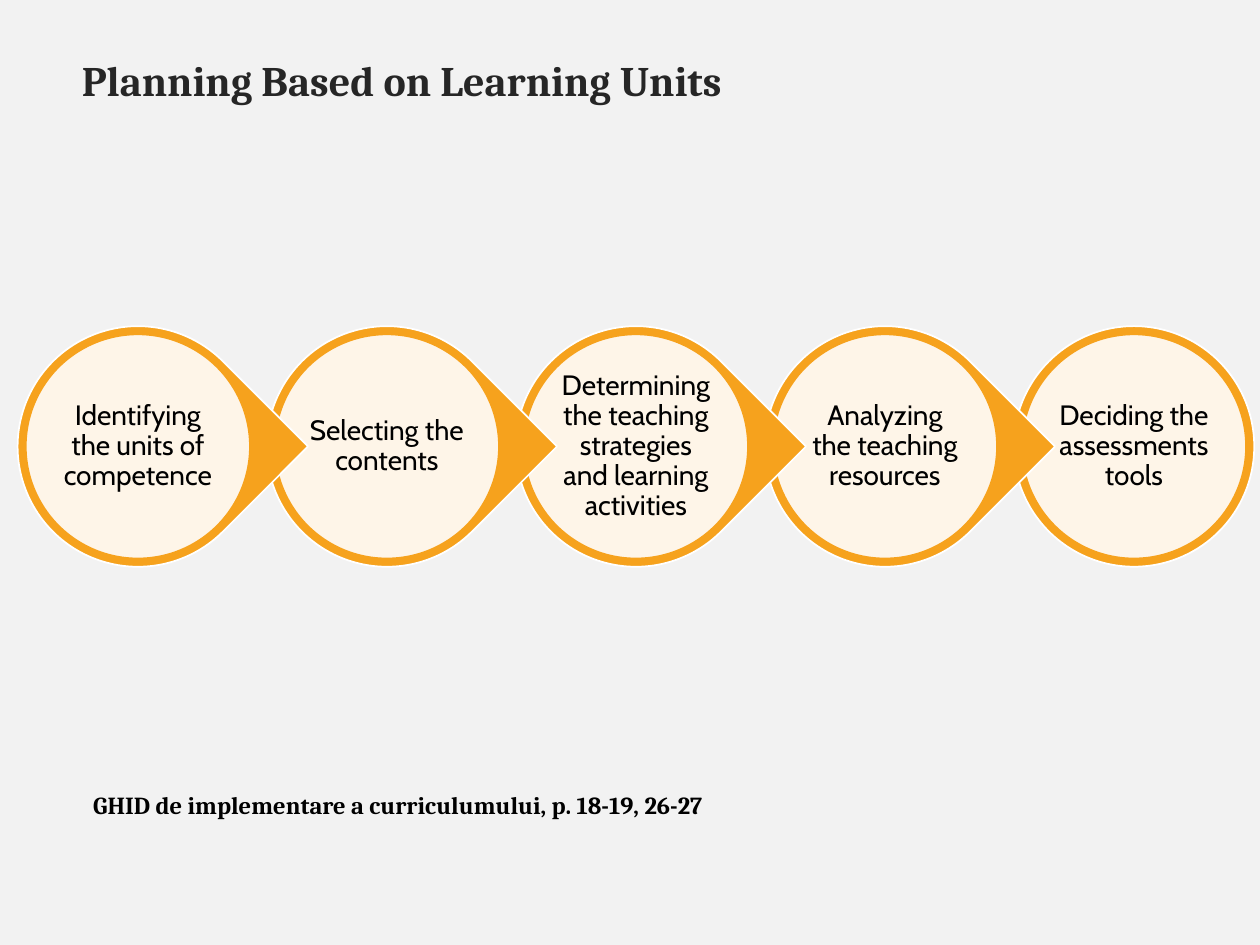
from lxml import etree
from pptx import Presentation
from pptx.dml.color import RGBColor
from pptx.enum.shapes import MSO_SHAPE
from pptx.enum.text import MSO_ANCHOR, PP_ALIGN
from pptx.oxml.ns import qn
from pptx.util import Cm, Pt

ELLIPSE, TEARDROP = MSO_SHAPE.OVAL, MSO_SHAPE.TEAR
MIDDLE, CENTER = MSO_ANCHOR.MIDDLE, PP_ALIGN.CENTER

ORANGE, WHITE, BLACK = "F6A21D", "FFFFFF", "000000"
STEPS = [
    "Identifying the units of competence",
    "Selecting the contents",
    "Determining the teaching strategies and learning activities",
    "Analyzing the teaching resources",
    "Deciding the assessments tools",
]
FIRST_CENTER, CENTER_Y, PITCH = 2.78, 9, 5.02
OUTER, INNER, LABEL = 4.85, 4.52, 3.23


def color(hex_code):
    return RGBColor.from_string(hex_code)


def centered(x, size):
    """Left, top, width and height of a square around a step's center."""
    return Cm(x - size / 2), Cm(CENTER_Y - size / 2), Cm(size), Cm(size)


def add_disc(page, kind, x, size, fill, line, opacity=100):
    disc = page.shapes.add_shape(kind, *centered(x, size))
    disc.shadow.inherit = False
    disc.fill.solid()
    disc.fill.fore_color.rgb = color(fill)
    disc.line.color.rgb = color(line)
    disc.line.width = Pt(1)
    if opacity < 100:
        fill_color = disc.fill._xPr.find(qn("a:solidFill"))[0]
        etree.SubElement(fill_color, qn("a:alpha"), val=str(opacity * 1000))
    return disc


def add_text(page, place, text, font, size, hex_code, bold=False):
    box = page.shapes.add_textbox(*place)
    box.text_frame.word_wrap = True
    para = box.text_frame.paragraphs[0]
    para.text = text
    span = para.runs[0].font
    span.name, span.size, span.bold = font, Pt(size), bold
    span.color.rgb = color(hex_code)
    return box


def add_step(page, x, text, is_last):
    outer = add_disc(page, ELLIPSE if is_last else TEARDROP, x, OUTER, ORANGE, WHITE)
    if not is_last:
        outer.adjustments[0] = 1
        outer.rotation = 45
    add_disc(page, ELLIPSE, x, INNER, WHITE, ORANGE, opacity=90)

    frame = add_text(page, centered(x, LABEL), text, "Cabin", 16, BLACK).text_frame
    frame.vertical_anchor = MIDDLE
    frame.margin_left = frame.margin_right = Cm(0.05)
    frame.margin_top = frame.margin_bottom = Cm(0.05)
    frame.paragraphs[0].alignment = CENTER
    frame.paragraphs[0].line_spacing = 0.9


def main():
    deck = Presentation()
    deck.slide_width, deck.slide_height = Cm(25.4), Cm(19.05)
    page = deck.slides.add_slide(deck.slide_layouts[6])
    page.background.fill.solid()
    page.background.fill.fore_color.rgb = color("F2F2F2")

    title = add_text(page, (Cm(1.4), Cm(0.97), Cm(22.89), Cm(17.2)),
                     "Planning Based on Learning Units", "Cambria", 24, "262626", bold=True)
    title.text_frame.paragraphs[0].space_before = Pt(10)

    # Later steps lie behind, so that each tip overlaps the next disc.
    for index, text in reversed(list(enumerate(STEPS))):
        add_step(page, FIRST_CENTER + index * PITCH, text, index == len(STEPS) - 1)

    add_text(page, (Cm(1.63), Cm(15.8), Cm(21.74), Cm(0.86)),
             "GHID de implementare a curriculumului, p. 18-19, 26-27",
             "Cambria", 14, BLACK, bold=True)
    deck.save("out.pptx")


if __name__ == "__main__":
    main()
